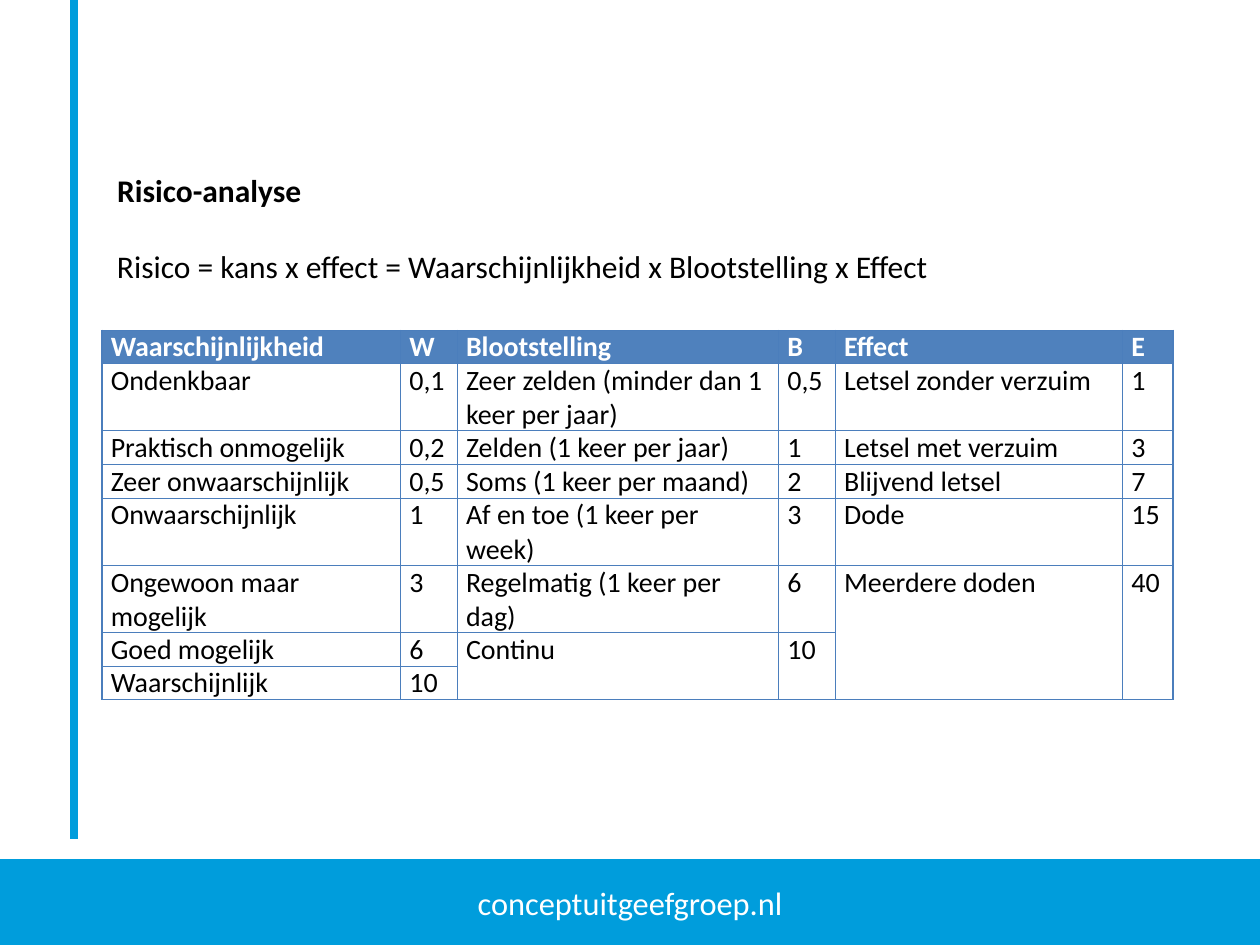
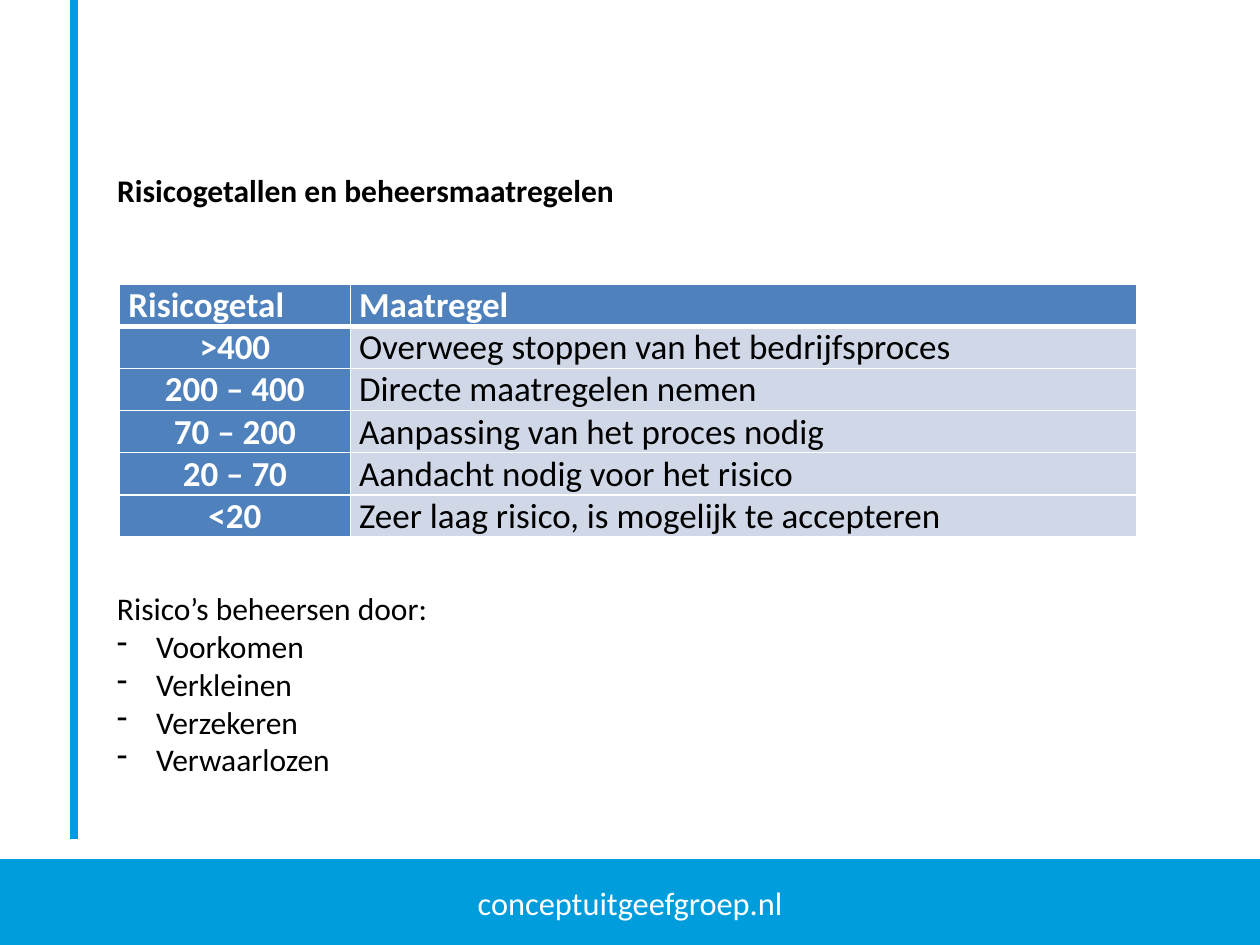
from lxml.etree import SubElement
from pptx import Presentation
from pptx.dml.color import RGBColor
from pptx.enum.shapes import MSO_CONNECTOR, MSO_SHAPE
from pptx.enum.text import MSO_ANCHOR, MSO_AUTO_SIZE, PP_ALIGN
from pptx.oxml.ns import qn
from pptx.util import Inches, Pt

COLORS = {
    "brand": "009DDC",
    "white": "FFFFFF",
    "text": "000000",
    "header": "4F81BD",
    "grid": "4B7EBC",
    "measure": "D0D8E8",
}
FONT = "Calibri"
WIDTH, HEIGHT = Inches(10), Inches(7.5)
TITLE_ONLY = 5
TEXT_LEFT, TEXT_WIDTH = 8.3, 88.2
TITLE_TOP, LINE_PITCH = 17.47, 4.02
HANGING = Inches(0.31)

RISK_COLUMNS = [23.7, 4.5, 25.5, 4.5, 22.8, 4.0]
RISK_FACTORS = [
    ["Waarschijnlijkheid", "W", "Blootstelling", "B", "Effect", "E"],
    ["Ondenkbaar", "0,1", "Zeer zelden (minder dan 1 keer per jaar)", "0,5",
     "Letsel zonder verzuim", "1"],
    ["Praktisch onmogelijk", "0,2", "Zelden (1 keer per jaar)", "1", "Letsel met verzuim", "3"],
    ["Zeer onwaarschijnlijk", "0,5", "Soms (1 keer per maand)", "2", "Blijvend letsel", "7"],
    ["Onwaarschijnlijk", "1", "Af en toe (1 keer per week)", "3", "Dode", "15"],
    ["Ongewoon maar mogelijk", "3", "Regelmatig (1 keer per dag)", "6", "Meerdere doden", "40"],
    ["Goed mogelijk", "6", "Continu", "10", "", ""],
    ["Waarschijnlijk", "10", "", "", "", ""],
]
RISK_ROW_LINES = [1, 2, 1, 1, 2, 2, 1, 1]
MERGE_STARTS = {2: 6, 3: 6, 4: 5, 5: 5}

MEASURES = [
    ["Risicogetal", "Maatregel"],
    [">400", "Overweeg stoppen van het bedrijfsproces"],
    ["200 – 400", "Directe maatregelen nemen"],
    ["70 – 200", "Aanpassing van het proces nodig"],
    ["20 – 70", "Aandacht nodig voor het risico"],
    ["<20", "Zeer laag risico, is mogelijk te accepteren"],
]
CONTROLS = ["Voorkomen", "Verkleinen", "Verzekeren", "Verwaarlozen"]


def across(percent):
    return round(WIDTH * percent / 100)


def down(percent):
    return round(HEIGHT * percent / 100)


def color(key):
    return RGBColor.from_string(COLORS[key])


def write(paragraph, text, size=18, bold=False, ink="text", align=PP_ALIGN.LEFT, bullet=None):
    if bullet:
        properties = paragraph._p.get_or_add_pPr()
        properties.set("marL", str(HANGING))
        properties.set("indent", str(-HANGING))
        SubElement(properties, qn("a:buChar"), char=bullet)
    paragraph.text = text
    paragraph.alignment = align
    paragraph.space_before = paragraph.space_after = Pt(0)
    font = paragraph.runs[0].font
    font.name, font.size, font.bold = FONT, Pt(size), bold
    font.color.rgb = color(ink)


def add_frame(slide):
    band = slide.shapes.add_shape(MSO_SHAPE.RECTANGLE, 0, down(90.93), WIDTH, down(9.07))
    band.shadow.inherit = False
    band.fill.solid()
    band.fill.fore_color.rgb = color("brand")
    band.line.fill.background()
    band.text_frame.vertical_anchor = MSO_ANCHOR.MIDDLE
    write(band.text_frame.paragraphs[0], "conceptuitgeefgroep.nl", size=18.5, ink="white",
          align=PP_ALIGN.CENTER)
    rule = slide.shapes.add_connector(MSO_CONNECTOR.STRAIGHT, across(5.9), 0,
                                      across(5.9), down(88.8))
    rule.line.color.rgb = color("brand")
    rule.line.width = Pt(4.5)
    SubElement(rule._element.spPr, qn("a:effectLst"))


def add_titled_slide(deck, heading):
    slide = deck.slides.add_slide(deck.slide_layouts[TITLE_ONLY])
    add_frame(slide)
    title = slide.shapes.title
    title.left, title.top = across(TEXT_LEFT), down(TITLE_TOP)
    title.width, title.height = across(TEXT_WIDTH), down(5.4)
    title.text_frame.vertical_anchor = MSO_ANCHOR.TOP
    title.text_frame.auto_size = MSO_AUTO_SIZE.NONE
    write(title.text_frame.paragraphs[0], heading, bold=True)
    return slide


def add_body(slide, line, lead, items=()):
    body = slide.shapes.add_textbox(across(TEXT_LEFT), down(TITLE_TOP + line * LINE_PITCH),
                                    across(TEXT_WIDTH), down(1.4 + (1 + len(items)) * LINE_PITCH))
    frame = body.text_frame
    frame.word_wrap = True
    write(frame.paragraphs[0], lead)
    for item in items:
        write(frame.add_paragraph(), item, bullet="-")


def add_border(cell, side, key, points):
    line = SubElement(cell._tc.get_or_add_tcPr(), qn(f"a:ln{side}"), w=str(Pt(points)))
    fill = SubElement(line, qn("a:solidFill"))
    SubElement(fill, qn("a:srgbClr"), val=COLORS[key])


def add_grid(slide, left, top, columns, rows, texts, style):
    table = slide.shapes.add_table(len(rows), len(columns), across(left), down(top),
                                   across(sum(columns)), down(sum(rows))).table
    table.horz_banding = False
    for column, width in zip(table.columns, columns):
        column.width = across(width)
    for row, height in zip(table.rows, rows):
        row.height = down(height)
    for r, line in enumerate(texts):
        for c, text in enumerate(line):
            format_cell(table.cell(r, c), text, r, **style(r, c))
    return table


def format_cell(cell, text, row, border, border_width, header_rule, fill=None, **text_format):
    cell.margin_left = cell.margin_right = Inches(0.07)
    cell.margin_top = cell.margin_bottom = 0
    widths = {"L": border_width, "R": border_width,
              "T": header_rule if row == 1 else border_width,
              "B": header_rule if row == 0 else border_width}
    for side, points in widths.items():
        add_border(cell, side, border, points)
    if fill:
        cell.fill.solid()
        cell.fill.fore_color.rgb = color(fill)
    else:
        cell.fill.background()
    if text:
        write(cell.text_frame.paragraphs[0], text, **text_format)


def factor_style(row, column):
    header = row == 0
    return dict(border="grid", border_width=0.75, header_rule=0.75, size=16, bold=header,
                ink="white" if header else "text", fill="header" if header else None)


def measure_style(row, column):
    strong = row == 0 or column == 0
    return dict(border="white", border_width=1, header_rule=3, size=20, bold=strong,
                ink="white" if strong else "text", fill="header" if strong else "measure",
                align=PP_ALIGN.CENTER if row and column == 0 else PP_ALIGN.LEFT)


def add_risk_analysis(deck):
    slide = add_titled_slide(deck, "Risico-analyse")
    add_body(slide, 2, "Risico = kans x effect = Waarschijnlijkheid x Blootstelling x Effect")
    heights = [lines * 3.55 for lines in RISK_ROW_LINES]
    factors = add_grid(slide, 8.1, 34.93, RISK_COLUMNS, heights, RISK_FACTORS, factor_style)
    last_row = len(RISK_FACTORS) - 1
    for column, first_row in MERGE_STARTS.items():
        factors.cell(first_row, column).merge(factors.cell(last_row, column))


def add_risk_measures(deck):
    slide = add_titled_slide(deck, "Risicogetallen en beheersmaatregelen")
    add_body(slide, 11, "Risico’s beheersen door:", CONTROLS)
    add_grid(slide, 9.5, 30.1, [18.3, 62.4], [4.44] * len(MEASURES), MEASURES, measure_style)


def main():
    deck = Presentation()
    deck.slide_width, deck.slide_height = WIDTH, HEIGHT
    add_risk_analysis(deck)
    add_risk_measures(deck)
    deck.save("out.pptx")


if __name__ == "__main__":
    main()
